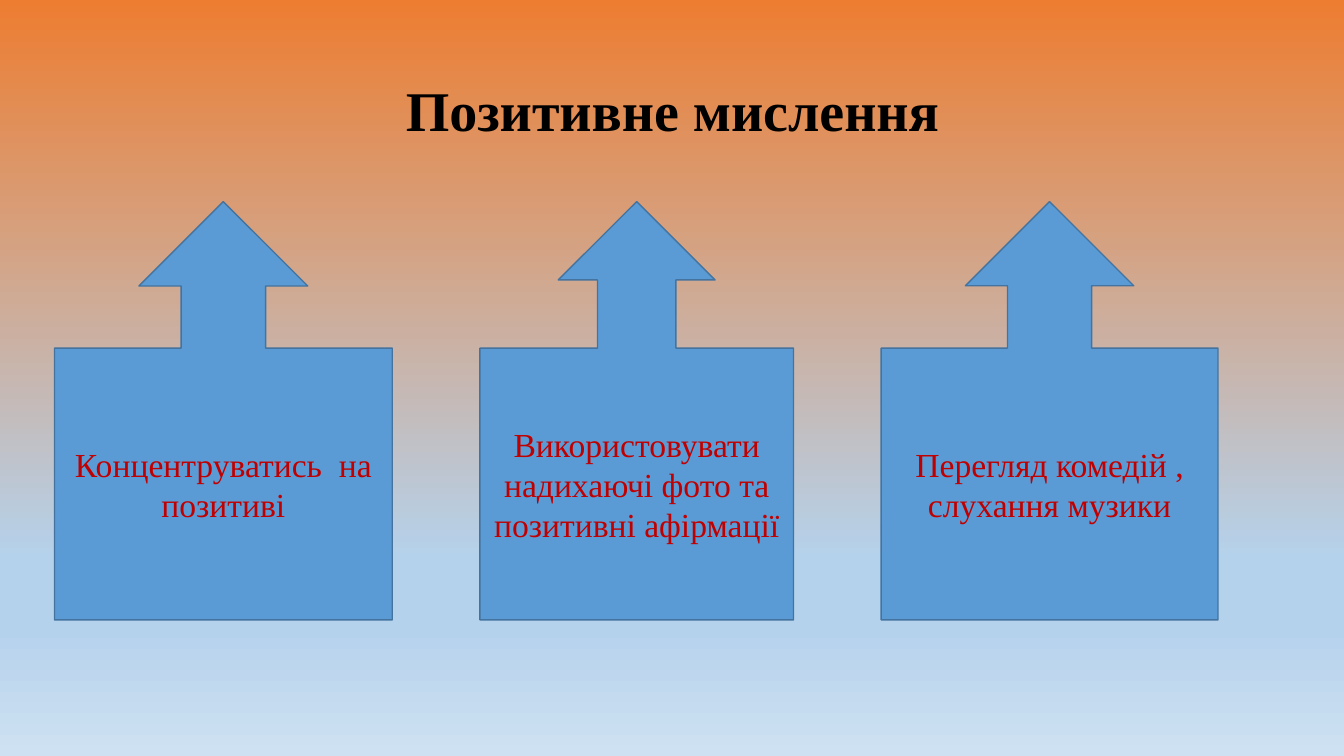
"""Build the slide on positive thinking with three upward arrow callouts."""
import dataclasses

import lxml.etree
import pptx
import pptx.dml.color
import pptx.enum.shapes
import pptx.enum.text
import pptx.oxml.ns
import pptx.slide
import pptx.text.text
import pptx.util

Inches = pptx.util.Inches
COLORS = {
    "title": "000000",
    "advice": "C00000",
    "callout": "5B9BD5",
    "outline": "43739E",
    "sunset": "ED7D31",
    "sky": "B5D2EC",
    "haze": "CEE1F2",
}
BACKGROUND_STOPS = [(0, "sunset"), (74, "sky"), (83, "sky"), (100, "haze")]
FONT = "Times New Roman"
FIRST_LEFT, GAP, TOP, HEIGHT = 0.54, 0.87, 2, 4.15


@dataclasses.dataclass(frozen=True)
class Advice:
    text: str
    width: float


ADVICE = [
    Advice("Концентруватись  на позитиві", 3.35),
    Advice("Використовувати надихаючі фото та позитивні афірмації", 3.11),
    Advice("Перегляд комедій , слухання музики", 3.34),
]


def color(name: str) -> pptx.dml.color.RGBColor:
    return pptx.dml.color.RGBColor.from_string(COLORS[name])


def paint_background(slide: pptx.slide.Slide) -> None:
    fill = slide.background.fill
    fill.gradient()
    fill.gradient_angle = 270
    qn = pptx.oxml.ns.qn
    stops = next(slide.element.iter(qn("a:gsLst")))
    for default_stop in list(stops):
        stops.remove(default_stop)
    for percent, name in BACKGROUND_STOPS:
        stop = lxml.etree.SubElement(stops, qn("a:gs"), pos=str(percent * 1000))
        lxml.etree.SubElement(stop, qn("a:srgbClr"), val=COLORS[name])


def write(frame: pptx.text.text.TextFrame, text: str, size: int,
          color_name: str, bold: bool = False) -> None:
    frame.word_wrap = True
    frame.vertical_anchor = pptx.enum.text.MSO_ANCHOR.MIDDLE
    paragraph = frame.paragraphs[0]
    paragraph.alignment = pptx.enum.text.PP_ALIGN.CENTER
    run = paragraph.add_run()
    run.text = text
    run.font.name = FONT
    run.font.size = pptx.util.Pt(size)
    run.font.bold = bold
    run.font.color.rgb = color(color_name)


def draw_callout(slide: pptx.slide.Slide, advice: Advice, left: float) -> None:
    callout = slide.shapes.add_shape(
        pptx.enum.shapes.MSO_SHAPE.UP_ARROW_CALLOUT,
        Inches(left), Inches(TOP), Inches(advice.width), Inches(HEIGHT))
    callout.shadow.inherit = False
    callout.fill.solid()
    callout.fill.fore_color.rgb = color("callout")
    callout.line.color.rgb = color("outline")
    callout.line.width = pptx.util.Pt(1)
    write(callout.text_frame, advice.text, 24, "advice")


def main() -> None:
    presentation = pptx.Presentation()
    presentation.slide_width = Inches(13.33)
    presentation.slide_height = Inches(7.5)
    slide = presentation.slides.add_slide(presentation.slide_layouts[6])
    paint_background(slide)

    title = slide.shapes.add_textbox(
        Inches(0.92), Inches(0.4), Inches(11.5), Inches(1.45))
    write(title.text_frame, "Позитивне мислення", 40, "title", bold=True)
    title.text_frame.paragraphs[0].line_spacing = 0.9

    left = FIRST_LEFT
    for advice in ADVICE:
        draw_callout(slide, advice, left)
        left += advice.width + GAP

    presentation.save("out.pptx")


if __name__ == "__main__":
    main()
